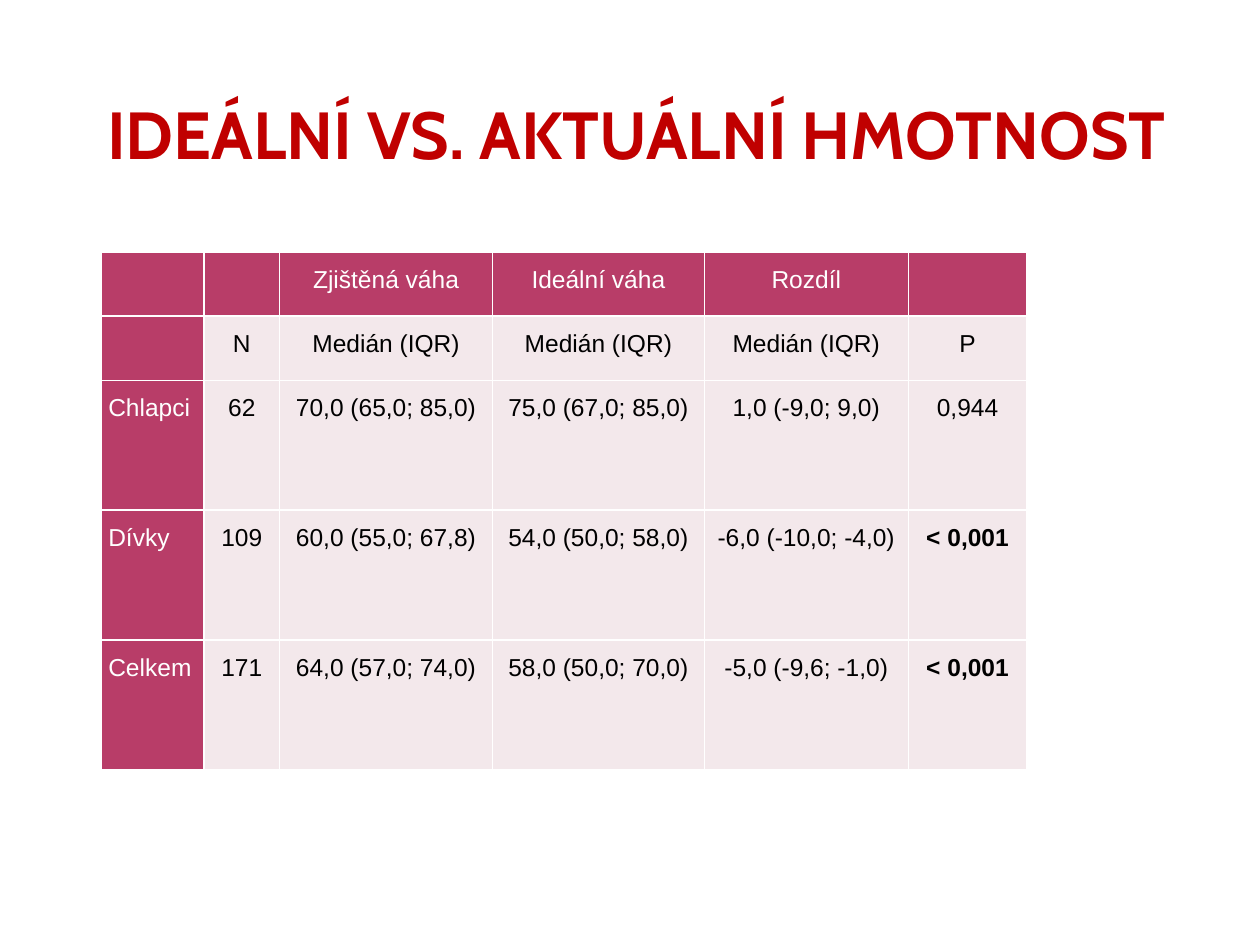
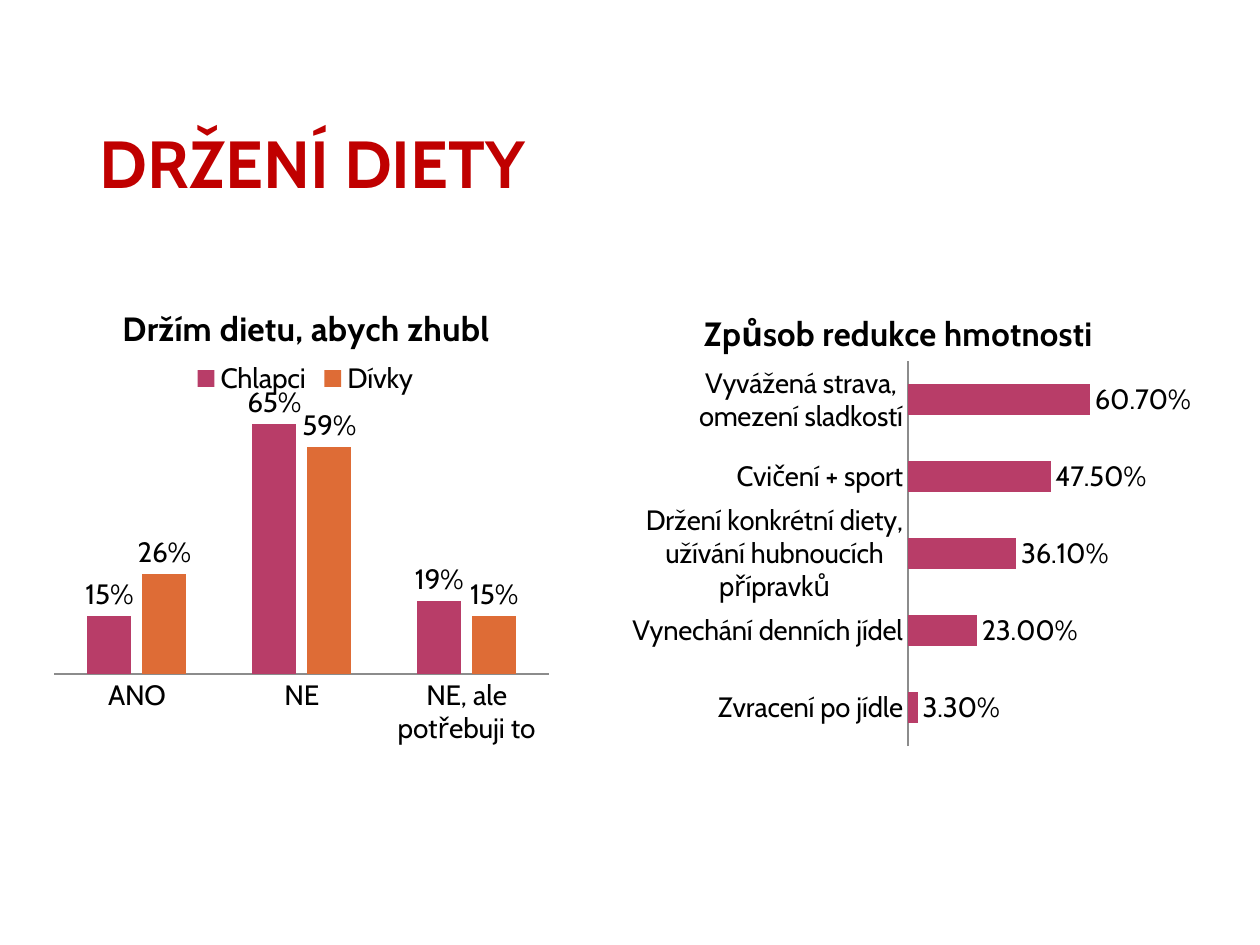
from dataclasses import dataclass
from lxml.etree import SubElement, QName
from pptx import Presentation
from pptx.chart.data import CategoryChartData
from pptx.dml.color import RGBColor
from pptx.enum.chart import XL_CHART_TYPE, XL_LABEL_POSITION, XL_LEGEND_POSITION, XL_TICK_MARK
from pptx.enum.text import MSO_ANCHOR, PP_ALIGN
from pptx.oxml.ns import qn
from pptx.util import Pt


@dataclass(frozen=True)
class Theme:
    red: str = "C00000"
    rose: str = "B83D68"
    orange: str = "DE6C36"
    pale: str = "F3E8EB"
    gray: str = "8C8C8C"
    white: str = "FFFFFF"
    black: str = "000000"
    head: str = "Cabin"
    body: str = "Arial"
    title: float = 38
    cell: float = 14
    label: float = 16
    caption: float = 19.2


THEME = Theme()

WEIGHT = {
    "title": "IDEÁLNÍ VS. AKTUÁLNÍ HMOTNOST",
    "box": (57.6, 20.2, 620.6, 78.5),
    "at": (57.6, 144),
    "cols": (59, 43.2, 121.7, 121, 116.6, 67.7),
    "rows": (36.7, 36.7, 74.2, 74.2, 74.2),
    "cells": [
        ("", "", "Zjištěná váha", "Ideální váha", "Rozdíl", ""),
        ("", "N", "Medián (IQR)", "Medián (IQR)", "Medián (IQR)", "P"),
        ("Chlapci", "62", "70,0 (65,0; 85,0)", "75,0 (67,0; 85,0)", "1,0 (-9,0; 9,0)", "0,944"),
        ("Dívky", "109", "60,0 (55,0; 67,8)", "54,0 (50,0; 58,0)", "-6,0 (-10,0; -4,0)", "< 0,001"),
        ("Celkem", "171", "64,0 (57,0; 74,0)", "58,0 (50,0; 70,0)", "-5,0 (-9,6; -1,0)", "< 0,001"),
    ],
}

DIET = {
    "title": "DRŽENÍ DIETY",
    "box": (53.3, 20.9, 612, 94.3),
    "charts": [
        {
            "kind": XL_CHART_TYPE.COLUMN_CLUSTERED,
            "box": (25.2, 157, 294.5, 275),
            "title": "Držím dietu, abych zhubl",
            "cats": ("ANO", "NE", "NE, ale potřebuji to"),
            "series": [
                ("Chlapci", (0.15, 0.65, 0.19), THEME.rose),
                ("Dívky", (0.26, 0.59, 0.15), THEME.orange),
            ],
            "format": "0%",
            "head": (0.14, 0.05),
            "plot": (0.02, 0.27, 0.96, 0.56),
            "legend": (0.28, 0.17),
        },
        {
            "kind": XL_CHART_TYPE.BAR_CLUSTERED,
            "box": (357.8, 157, 322.6, 275),
            "title": "Způsob redukce hmotnosti",
            "cats": (
                "Zvracení po jídle",
                "Vynechání denních jídel",
                "Držení konkrétní diety, užívání hubnoucích přípravků",
                "Cvičení + sport",
                "Vyvážená strava, omezení sladkostí",
            ),
            "series": [("Series 1", (0.033, 0.23, 0.361, 0.475, 0.607), THEME.rose)],
            "format": "0.00%",
            "head": (0.13, 0.06),
            "plot": (0.51, 0.18, 0.38, 0.8),
            "legend": None,
        },
    ],
}


def rgb(code):
    return RGBColor.from_string(code)


def style(font, name, size, color, bold=False):
    font.name = name
    font.size = Pt(size)
    font.color.rgb = rgb(color)
    font.bold = bold


def paint(fill, color):
    fill.solid()
    fill.fore_color.rgb = rgb(color)


def start(deck, text, box):
    slide = deck.slides.add_slide(deck.slide_layouts[5])
    title = slide.shapes.title
    title.left, title.top, title.width, title.height = map(Pt, box)
    frame = title.text_frame
    frame.text = text
    frame.word_wrap = True
    frame.vertical_anchor = MSO_ANCHOR.BOTTOM
    frame.margin_left = frame.margin_right = Pt(3.6)
    frame.margin_top = frame.margin_bottom = 0
    line = frame.paragraphs[0]
    line.alignment = PP_ALIGN.LEFT
    style(line.runs[0].font, THEME.head, THEME.title, THEME.red, True)
    return slide


def fill_cell(cell, text, row, col):
    dark = row == 0 or col == 0
    paint(cell.fill, THEME.rose if dark else THEME.pale)
    cell.margin_left = cell.margin_right = Pt(4.3)
    cell.margin_top = cell.margin_bottom = 0
    cell.text_frame.text = text
    line = cell.text_frame.paragraphs[0]
    line.alignment = PP_ALIGN.CENTER if col else PP_ALIGN.JUSTIFY
    line.line_spacing = 1.5
    line.space_before = Pt(6)
    style(line.font, THEME.body, THEME.cell, THEME.white if dark else THEME.black)
    for run in line.runs:
        style(run.font, THEME.body, THEME.cell, THEME.white if dark else THEME.black, text.startswith("<"))


def add_grid(slide, data):
    cols, rows = data["cols"], data["rows"]
    size = sum(cols), sum(rows)
    grid = slide.shapes.add_table(len(rows), len(cols), *map(Pt, data["at"] + size)).table
    grid.first_col = True
    grid.horz_banding = False
    for col, width in zip(grid.columns, cols):
        col.width = Pt(width)
    for row, height in zip(grid.rows, rows):
        row.height = Pt(height)
    for row, texts in enumerate(data["cells"]):
        for col, text in enumerate(texts):
            fill_cell(grid.cell(row, col), text, row, col)


def place(node, spot, index):
    old = node.find(qn("c:layout"))
    if old is not None:
        node.remove(old)
    layout = SubElement(node, qn("c:layout"))
    node.insert(index, layout)
    manual = SubElement(layout, qn("c:manualLayout"))
    pairs = [("xMode", "edge"), ("yMode", "edge"), *zip("xywh", spot)]
    if len(spot) == 4:
        pairs.insert(0, ("layoutTarget", "inner"))
    for tag, value in pairs:
        SubElement(manual, QName(qn("c:layout")).namespace and qn("c:" + tag)).set("val", str(value))


def add_graph(slide, data):
    source = CategoryChartData(number_format=data["format"])
    source.categories = data["cats"]
    for name, values, color in data["series"]:
        source.add_series(name, values)
    chart = slide.shapes.add_chart(data["kind"], *map(Pt, data["box"]), source).chart
    style(chart.font, THEME.head, THEME.label, THEME.black)

    frame = chart.chart_title.text_frame
    frame.text = data["title"]
    style(frame.paragraphs[0].runs[0].font, THEME.head, THEME.caption, THEME.black, True)
    chart.chart_title.include_in_layout = False

    values = chart.value_axis
    values.visible = values.has_major_gridlines = False
    values.minimum_scale, values.maximum_scale = 0, 0.7
    axis = chart.category_axis
    axis.major_tick_mark = axis.minor_tick_mark = XL_TICK_MARK.NONE
    axis.format.line.color.rgb = rgb(THEME.gray)
    axis.format.line.width = Pt(0.9)

    plot = chart.plots[0]
    plot.vary_by_categories = False
    plot.gap_width, plot.overlap = 150, -25
    for series, (name, numbers, color) in zip(plot.series, data["series"]):
        paint(series.format.fill, color)
        labels = series.data_labels
        labels.show_value = True
        labels.number_format = data["format"]
        labels.number_format_is_linked = False
        labels.position = XL_LABEL_POSITION.OUTSIDE_END
        style(labels.font, THEME.head, THEME.label, THEME.black)

    root = chart.element if hasattr(chart, "element") else chart._chartSpace
    place(root.find(".//" + qn("c:chart") + "/" + qn("c:title")), data["head"], 1)
    place(root.find(".//" + qn("c:plotArea")), data["plot"], 0)
    chart.has_legend = data["legend"] is not None
    if chart.has_legend:
        chart.legend.position = XL_LEGEND_POSITION.TOP
        chart.legend.include_in_layout = False
        style(chart.legend.font, THEME.head, THEME.label, THEME.black)
        place(root.find(".//" + qn("c:legend")), data["legend"], 1)


def main():
    deck = Presentation()
    deck.slide_width, deck.slide_height = Pt(720), Pt(540)
    add_grid(start(deck, WEIGHT["title"], WEIGHT["box"]), WEIGHT)
    slide = start(deck, DIET["title"], DIET["box"])
    for data in DIET["charts"]:
        add_graph(slide, data)
    deck.save("out.pptx")


if __name__ == "__main__":
    main()
